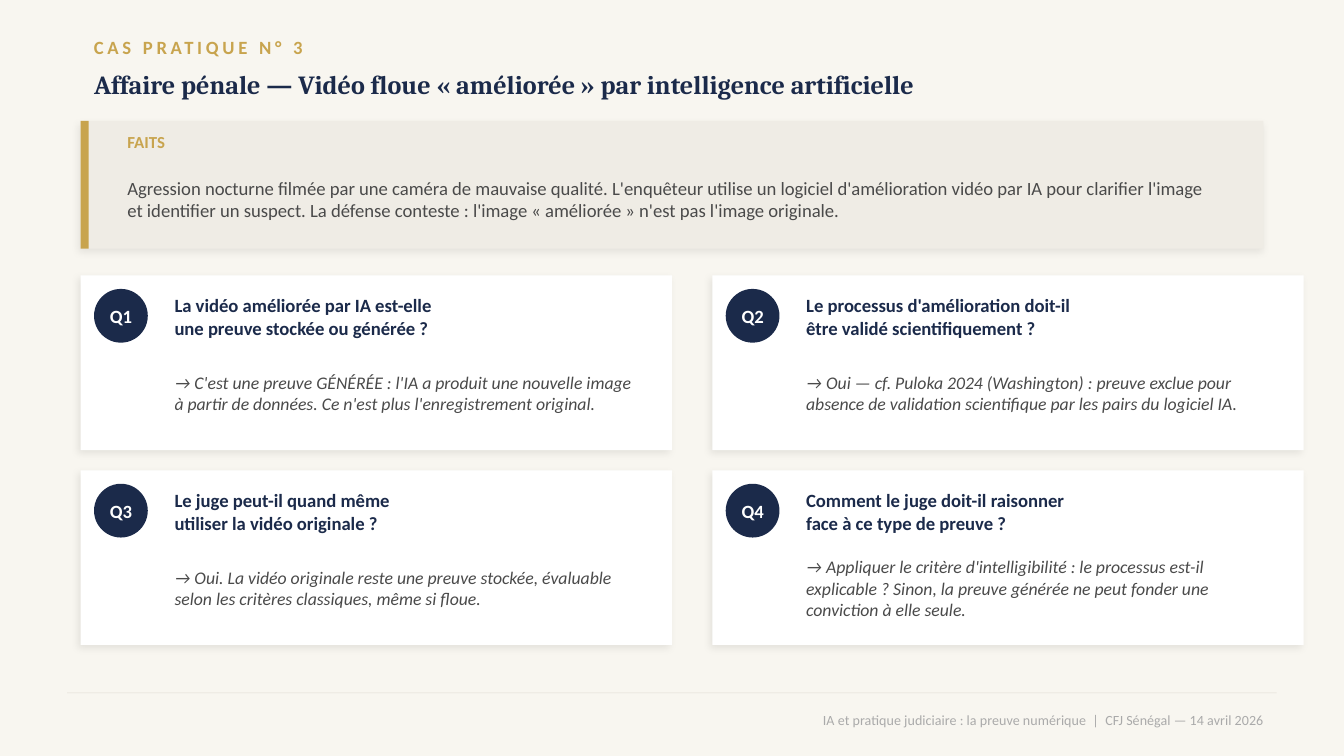
from dataclasses import dataclass

from lxml import etree
from pptx import Presentation
from pptx.dml.color import RGBColor
from pptx.enum.shapes import MSO_SHAPE as SHAPE
from pptx.enum.text import MSO_ANCHOR as ANCHOR, MSO_AUTO_SIZE as AUTO, PP_ALIGN as ALIGN
from pptx.oxml import parse_xml
from pptx.oxml.ns import nsdecls
from pptx.util import Pt

KICKER = "CAS PRATIQUE N° 3"
TITLE = "Affaire pénale — Vidéo floue « améliorée » par intelligence artificielle"
FACTS_LABEL = "FAITS"
FACTS = (
    "Agression nocturne filmée par une caméra de mauvaise qualité. L'enquêteur utilise un "
    "logiciel d'amélioration vidéo par IA pour clarifier l'image et identifier un suspect. "
    "La défense conteste : l'image « améliorée » n'est pas l'image originale."
)
QUESTIONS = [
    (("La vidéo améliorée par IA est-elle", "une preuve stockée ou générée ?"),
     "→ C'est une preuve GÉNÉRÉE : l'IA a produit une nouvelle image à partir de données. "
     "Ce n'est plus l'enregistrement original."),
    (("Le processus d'amélioration doit-il", "être validé scientifiquement ?"),
     "→ Oui — cf. Puloka 2024 (Washington) : preuve exclue pour absence de validation "
     "scientifique par les pairs du logiciel IA."),
    (("Le juge peut-il quand même", "utiliser la vidéo originale ?"),
     "→ Oui. La vidéo originale reste une preuve stockée, évaluable selon les critères "
     "classiques, même si floue."),
    (("Comment le juge doit-il raisonner", "face à ce type de preuve ?"),
     "→ Appliquer le critère d'intelligibilité : le processus est-il explicable ? Sinon, la "
     "preuve générée ne peut fonder une conviction à elle seule."),
]
FOOTER = "IA et pratique judiciaire : la preuve numérique  |  CFJ Sénégal — 14 avril 2026"


@dataclass(frozen=True)
class Style:
    size: float
    color: str
    bold: bool = False
    italic: bool = False
    font: str = "Calibri"
    tracking: int = 0


class Theme:
    paper, panel, white = "F8F6F0", "EFECE5", "FFFFFF"
    navy, gold, gray, pale = "1B2A4A", "C8A44E", "4A4A4A", "AAAAAA"
    kicker = Style(10, gold, bold=True, tracking=200)
    title = Style(14, navy, bold=True, font="Cambria")
    label = Style(9, gold, bold=True)
    body = Style(10, gray)
    badge = Style(10, white, bold=True)
    question = Style(10, navy, bold=True)
    answer = Style(9.5, gray, italic=True)
    footer = Style(7.5, pale)


PX = 4572  # EMU per px, 200 px to the inch
SLIDE_W, SLIDE_H = 2000, 1125
LEFT = 120
CARD_TOP, CARD_W, CARD_H = 410, 880, 260
GAP_X, GAP_Y = 60, 30
PAD, BADGE = 20, 80

SHADOW = (
    f'<a:effectLst {nsdecls("a")}><a:outerShdw blurRad="50800" dist="25400" dir="8100000" '
    'algn="bl" rotWithShape="0"><a:srgbClr val="000000"><a:alpha val="8000"/></a:srgbClr>'
    "</a:outerShdw></a:effectLst>"
)


def rgb(color):
    return RGBColor.from_string(color)


def emu(*box):
    return [v * PX for v in box]


def add_block(slide, box, color, kind=SHAPE.RECTANGLE, raised=False):
    """Add a borderless filled shape, with a soft shadow if raised."""
    s = slide.shapes.add_shape(kind, *emu(*box))
    s.fill.solid()
    s.fill.fore_color.rgb = rgb(color)
    s.line.fill.background()
    s.shadow.inherit = False
    if raised:
        props = s._element.spPr
        props.remove(props.find("{*}effectLst"))
        props.append(parse_xml(SHADOW))
    return s


def write(s, lines, style, align=ALIGN.LEFT):
    """Write one paragraph per line, centred vertically."""
    tf = s.text_frame
    tf.word_wrap = True
    tf.auto_size = AUTO.NONE
    tf.vertical_anchor = ANCHOR.MIDDLE
    for i, line in enumerate(lines):
        p = tf.add_paragraph() if i else tf.paragraphs[0]
        p.alignment = align
        r = p.add_run()
        r.text = line
        f = r.font
        f.name, f.size, f.bold, f.italic = style.font, Pt(style.size), style.bold, style.italic
        f.color.rgb = rgb(style.color)
        if style.tracking:
            r._r.get_or_add_rPr().set("spc", str(style.tracking))


def add_text(slide, box, lines, style, align=ALIGN.LEFT):
    write(slide.shapes.add_textbox(*emu(*box)), lines, style, align)


def add_header(slide):
    add_text(slide, (LEFT, 40, 600, 60), [KICKER], Theme.kicker)
    title = slide.shapes.title
    title.left, title.top, title.width, title.height = emu(LEFT, 90, 1800, 70)
    write(title, [TITLE], Theme.title)


def add_facts(slide):
    top, height = 180, 190
    add_block(slide, (LEFT, top, 1760, height), Theme.panel, raised=True)
    add_block(slide, (LEFT, top, 12, height), Theme.gold)
    add_text(slide, (170, top + 6, 200, 50), [FACTS_LABEL], Theme.label)
    add_text(slide, (170, top + 56, 1660, 120), [FACTS], Theme.body)


def add_card(slide, index, question, answer):
    row, col = divmod(index, 2)
    x = LEFT + col * (CARD_W + GAP_X)
    y = CARD_TOP + row * (CARD_H + GAP_Y)
    text_x, text_w = x + PAD + BADGE + 20, 730
    badge_box = (x + PAD, y + PAD, BADGE, BADGE)
    add_block(slide, (x, y, CARD_W, CARD_H), Theme.white, raised=True)
    add_block(slide, badge_box, Theme.navy, SHAPE.OVAL)
    add_text(slide, badge_box, [f"Q{index + 1}"], Theme.badge, ALIGN.CENTER)
    add_text(slide, (text_x, y + 16, text_w, 90), question, Theme.question)
    add_text(slide, (text_x, y + 110, text_w, 130), [answer], Theme.answer)


def add_footer(slide):
    add_block(slide, (100, 1030, 1800, 2), Theme.panel)
    add_text(slide, (100, 1036, 1800, 70), [FOOTER], Theme.footer, ALIGN.RIGHT)


def main():
    prs = Presentation()
    prs.slide_width, prs.slide_height = emu(SLIDE_W, SLIDE_H)
    slide = prs.slides.add_slide(prs.slide_layouts.get_by_name("Title Only"))
    slide.background.fill.solid()
    slide.background.fill.fore_color.rgb = rgb(Theme.paper)
    add_footer(slide)
    add_header(slide)
    add_facts(slide)
    for i, (question, answer) in enumerate(QUESTIONS):
        add_card(slide, i, question, answer)
    prs.save("out.pptx")


if __name__ == "__main__":
    main()
